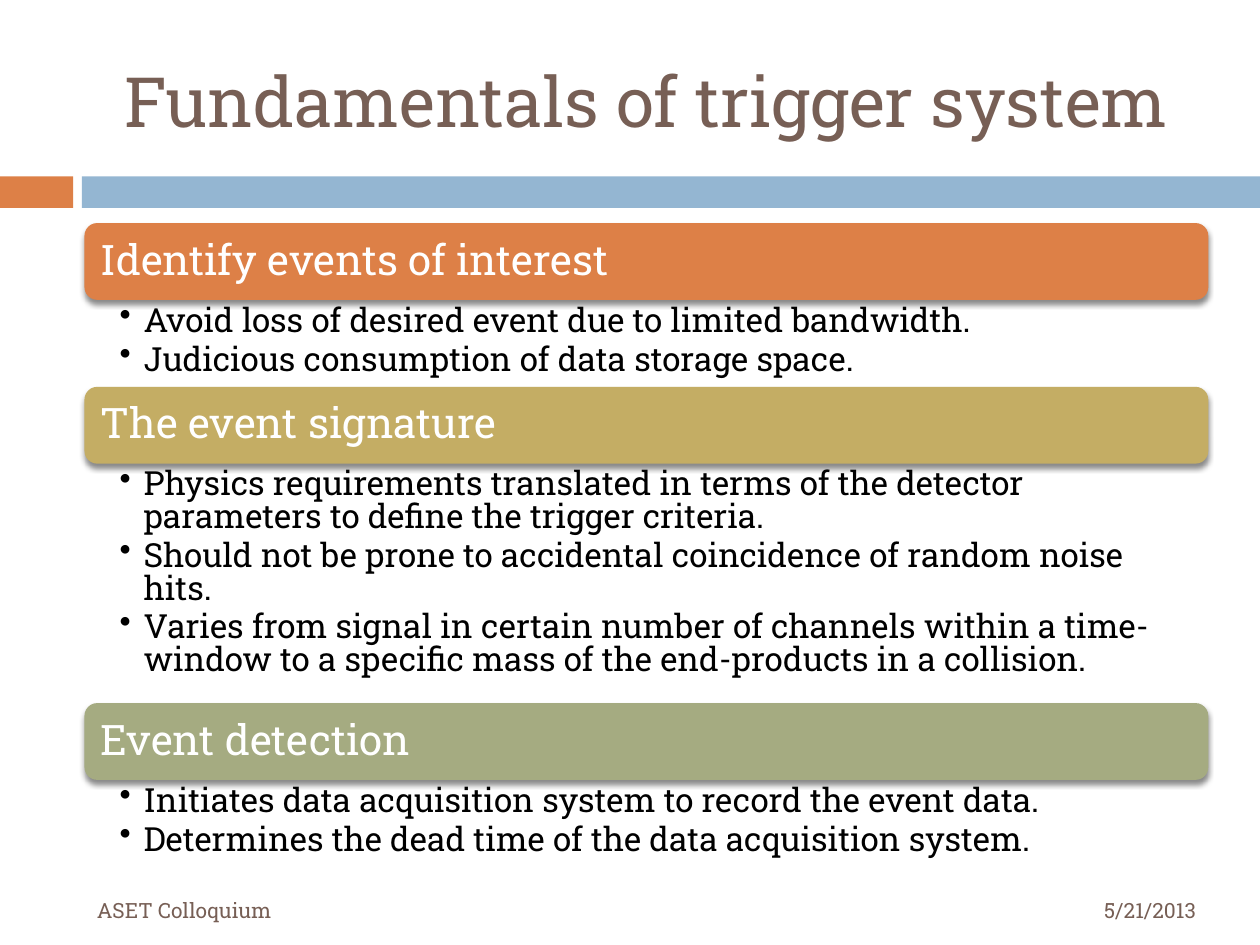
import pptx
import pptx.util
import pptx.oxml
import pptx.oxml.ns
import pptx.dml.color
import pptx.enum.shapes
import pptx.enum.text

Inches = pptx.util.Inches
Pt = pptx.util.Pt
Align = pptx.enum.text.PP_ALIGN
Anchor = pptx.enum.text.MSO_ANCHOR
Kind = pptx.enum.shapes.MSO_SHAPE

FONT = "Roboto Slab"
BROWN = "775F55"
LEFT, WIDTH = 0.67, 8.92
HEAD = 0.61
TOP = 1.77

BANDS = [(0, 0.58, "DD8047"), (0.65, 9.35, "94B6D2")]
LABELS = [
    ("Fundamentals of trigger system", (LEFT, 0.25, WIDTH, 1.08), 39.6, Align.CENTER),
    ("ASET Colloquium", (LEFT, 7.02, 5.93, 0.4), 12, Align.LEFT),
    ("5/21/2013", (6.67, 7.02, 2.92, 0.4), 12, Align.RIGHT),
]
TOPICS = [
    ("Identify events of interest", "DD8047", 0.69, [
        "Avoid loss of desired event due to limited bandwidth.",
        "Judicious consumption of data storage space.",
    ]),
    ("The event signature", "C4AD64", 1.9, [
        "Physics requirements translated in terms of the detector parameters to define the trigger criteria.",
        "Should not be prone to accidental coincidence of random noise hits.",
        "Varies from signal in certain number of channels within a time-window to a specific mass of the end-products in a collision.",
    ]),
    ("Event detection", "A5AB81", 0.69, [
        "Initiates data acquisition system to record the event data.",
        "Determines the dead time of the data acquisition system.",
    ]),
]
SHADOW = (
    '<a:effectLst %s><a:outerShdw blurRad="38100" dist="30480" dir="5400000" rotWithShape="0">'
    '<a:srgbClr val="000000"><a:alpha val="45000"/></a:srgbClr></a:outerShdw></a:effectLst>'
    % pptx.oxml.ns.nsdecls("a")
)
BULLET = '<a:buChar %s char="•"/>' % pptx.oxml.ns.nsdecls("a")


def color(code):
    return pptx.dml.color.RGBColor.from_string(code)


def add_box(slide, kind, area, fill):
    box = slide.shapes.add_shape(kind, *map(Inches, area))
    box.shadow.inherit = False
    box.fill.solid()
    box.fill.fore_color.rgb = color(fill)
    box.line.fill.background()
    return box


def set_frame(shape, insets, anchor):
    frame = shape.text_frame
    frame.word_wrap = True
    frame.vertical_anchor = anchor
    (frame.margin_left, frame.margin_top,
     frame.margin_right, frame.margin_bottom) = map(Inches, insets)
    return frame


def add_run(para, text, size, code, align=Align.LEFT):
    para.alignment = align
    run = para.add_run()
    run.text = text
    run.font.name = FONT
    run.font.size = Pt(size)
    run.font.color.rgb = color(code)


def add_list(slide, area, items):
    box = slide.shapes.add_textbox(*map(Inches, area))
    frame = set_frame(box, (0.28, 0.05, 0.19, 0.03), Anchor.TOP)
    for num, item in enumerate(items):
        para = frame.add_paragraph() if num else frame.paragraphs[0]
        add_run(para, item, 19, "000000")
        para.line_spacing = 0.82
        para.space_after = Pt(3.5)
        props = para._p.get_or_add_pPr()
        props.set("marL", str(Inches(0.19)))
        props.set("indent", str(Inches(-0.19)))
        props.append(pptx.oxml.parse_xml(BULLET))


def add_topic(slide, top, title, fill, depth, items):
    head = add_box(slide, Kind.ROUNDED_RECTANGLE, (LEFT, top, WIDTH, HEAD), fill)
    props = head._element.spPr
    props.remove(props.find(pptx.oxml.ns.qn("a:effectLst")))
    props.append(pptx.oxml.parse_xml(SHADOW))
    para = set_frame(head, (0.1,) * 4, Anchor.MIDDLE).paragraphs[0]
    add_run(para, title, 24, "FFFFFF")
    para.line_spacing = 0.9
    add_list(slide, (LEFT, top + HEAD, WIDTH, depth), items)


def main():
    deck = pptx.Presentation()
    deck.slide_width, deck.slide_height = Inches(10), Inches(7.5)
    slide = deck.slides.add_slide(deck.slide_layouts[6])
    for left, width, fill in BANDS:
        add_box(slide, Kind.RECTANGLE, (left, 1.4, width, 0.25), fill)
    for text, area, size, align in LABELS:
        box = slide.shapes.add_textbox(*map(Inches, area))
        frame = set_frame(box, (0.1, 0.05, 0.1, 0.05), Anchor.MIDDLE)
        add_run(frame.paragraphs[0], text, size, BROWN, align)
    top = TOP
    for title, fill, depth, items in TOPICS:
        add_topic(slide, top, title, fill, depth, items)
        top += HEAD + depth
    deck.save("out.pptx")


if __name__ == "__main__":
    main()
